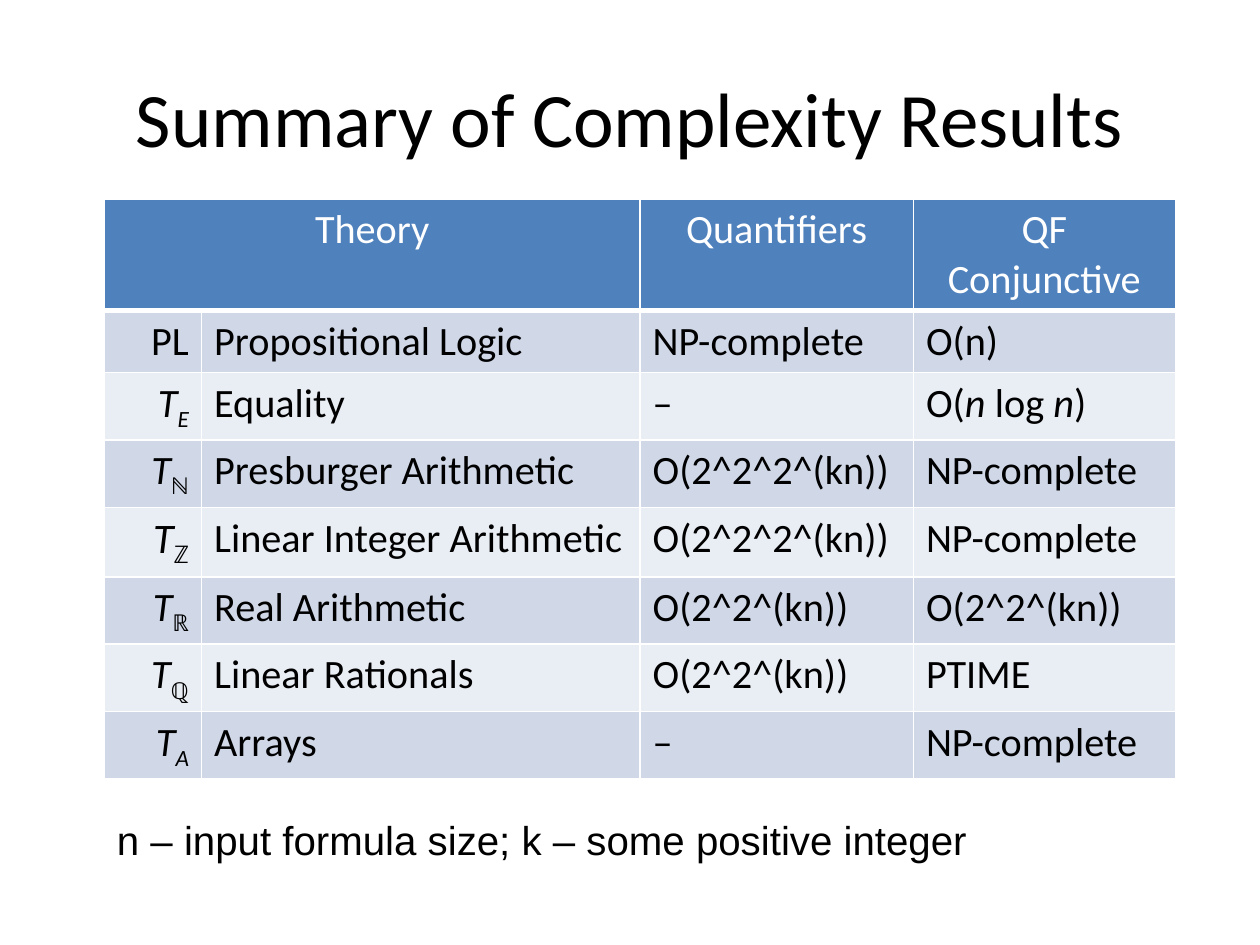
"""Build the slide that tabulates the complexity of deciding first-order theories."""
from dataclasses import dataclass
from typing import NamedTuple

from lxml import etree
from pptx import Presentation
from pptx import util as u
from pptx.dml.color import RGBColor
from pptx.enum import text
from pptx.oxml import ns


@dataclass(frozen=True)
class Theme:
    """Colours, fonts and type sizes of the slide."""
    ink: str = "000000"
    paper: str = "FFFFFF"
    header: str = "4F81BD"
    bands: tuple = ("D0D8E8", "E9EDF4")
    heading_font: str = "Calibri"
    note_font: str = "Arial"
    title_size: int = 44
    body_size: int = 23
    large_size: int = 24


class Run(NamedTuple):
    """A stretch of text with its own style."""
    words: str
    italic: bool = False
    subscript: bool = False
    size: int = Theme.body_size


class Theory(NamedTuple):
    """One row of the table, each cell a list of runs."""
    symbol: list
    name: str
    quantified: str
    conjunctive: list


THEME = Theme()
COLUMN_WIDTHS = (0.77, 3.48, 2.17, 2.08)
ROW_HEIGHT = 0.41


def indexed(index: str, italic: bool = False, size: int = THEME.body_size) -> list:
    """Return the runs of T with a subscript."""
    return [Run("T", True, size=size), Run(index, italic, True, size)]


THEORIES = (
    Theory([Run("PL")], "Propositional Logic", "NP-complete", [Run("O(n)")]),
    Theory(indexed("E", True), "Equality", "–",
           [Run("O("), Run("n ", True), Run("log "), Run("n", True), Run(")")]),
    Theory(indexed("ℕ"), "Presburger Arithmetic", "O(2^2^2^(kn))", [Run("NP-complete")]),
    Theory(indexed("ℤ", size=THEME.large_size), "Linear Integer Arithmetic",
           "O(2^2^2^(kn))", [Run("NP-complete")]),
    Theory(indexed("ℝ"), "Real Arithmetic", "O(2^2^(kn))", [Run("O(2^2^(kn))")]),
    Theory(indexed("ℚ"), "Linear Rationals", "O(2^2^(kn))", [Run("PTIME")]),
    Theory(indexed("A", True), "Arrays", "–", [Run("NP-complete")]),
)


def write(paragraph, runs: list, colour: str = THEME.ink,
          font: str = THEME.heading_font, align=text.PP_ALIGN.LEFT) -> None:
    """Fill a paragraph with styled runs."""
    paragraph.alignment = align
    for part in runs:
        run = paragraph.add_run()
        run.text = part.words
        style = {"name": font, "size": u.Pt(part.size), "italic": part.italic, "bold": False}
        for attribute, value in style.items():
            setattr(run.font, attribute, value)
        run.font.color.rgb = RGBColor.from_string(colour)
        if part.subscript:
            run.font._element.set("baseline", "-25000")


def paint(cell, fill: str, bottom: int = 1) -> None:
    """Give a cell its fill and white borders."""
    cell.fill.solid()
    cell.fill.fore_color.rgb = RGBColor.from_string(fill)
    properties = cell._tc.get_or_add_tcPr()
    widths = {"lnL": 1, "lnR": 1, "lnT": 1, "lnB": bottom}
    for place, (side, width) in enumerate(widths.items()):
        line = etree.Element(ns.qn(f"a:{side}"), w=str(u.Pt(width)))
        solid = etree.SubElement(line, ns.qn("a:solidFill"))
        etree.SubElement(solid, ns.qn("a:srgbClr"), val=THEME.paper)
        properties.insert(place, line)


def draw_header(table) -> None:
    """Write the heading row, with Theory over two columns."""
    headings = ([], ["Theory"], ["Quantifiers"], ["QF", "Conjunctive"])
    for cell in table.rows[0].cells:
        paint(cell, THEME.header, bottom=3)
    table.cell(0, 0).merge(table.cell(0, 1))
    for column, lines in enumerate(headings):
        frame = table.cell(0, 0 if column == 1 else column).text_frame
        for number, line in enumerate(lines):
            paragraph = frame.add_paragraph() if number else frame.paragraphs[0]
            write(paragraph, [Run(line)], THEME.paper, align=text.PP_ALIGN.CENTER)


def draw_theory(table, row: int, theory: Theory) -> None:
    """Write one theory into its banded row."""
    contents = (theory.symbol, [Run(theory.name)], [Run(theory.quantified)], theory.conjunctive)
    for column, runs in enumerate(contents):
        cell = table.cell(row, column)
        paint(cell, THEME.bands[(row - 1) % 2])
        align = text.PP_ALIGN.LEFT if column else text.PP_ALIGN.RIGHT
        write(cell.text_frame.paragraphs[0], runs, align=align)


def draw_table(slide) -> None:
    """Add the table of complexity results."""
    frame = slide.shapes.add_table(
        len(THEORIES) + 1, len(COLUMN_WIDTHS),
        u.Inches(0.83), u.Inches(1.58), u.Inches(sum(COLUMN_WIDTHS)), u.Inches(4.27))
    table = frame.table
    for column, width in zip(table.columns, COLUMN_WIDTHS):
        column.width = u.Inches(width)
    for row in table.rows:
        row.height = u.Inches(ROW_HEIGHT)
    draw_header(table)
    for row, theory in enumerate(THEORIES, start=1):
        draw_theory(table, row, theory)


def draw_title(slide) -> None:
    """Place and write the title."""
    title = slide.shapes.title
    box = {"left": 0.5, "top": 0.3, "width": 9, "height": 1.25}
    for attribute, value in box.items():
        setattr(title, attribute, u.Inches(value))
    title.text_frame.vertical_anchor = text.MSO_ANCHOR.MIDDLE
    write(title.text_frame.paragraphs[0],
          [Run("Summary of Complexity Results", size=THEME.title_size)],
          align=text.PP_ALIGN.CENTER)


def draw_legend(slide) -> None:
    """Explain the variables under the table."""
    legend = slide.shapes.add_textbox(
        u.Inches(0.83), u.Inches(6.42), u.Inches(8.25), u.Inches(0.49)).text_frame
    legend.word_wrap = True
    legend.auto_size = text.MSO_AUTO_SIZE.SHAPE_TO_FIT_TEXT
    write(legend.paragraphs[0], [Run("n – input formula size; k – some positive integer")],
          font=THEME.note_font)


def main() -> None:
    """Assemble and save the slide."""
    deck = Presentation()
    deck.slide_width, deck.slide_height = u.Inches(10), u.Inches(7.5)
    slide = deck.slides.add_slide(deck.slide_layouts.get_by_name("Title Only"))
    draw_title(slide)
    draw_table(slide)
    draw_legend(slide)
    deck.save("out.pptx")


if __name__ == "__main__":
    main()
